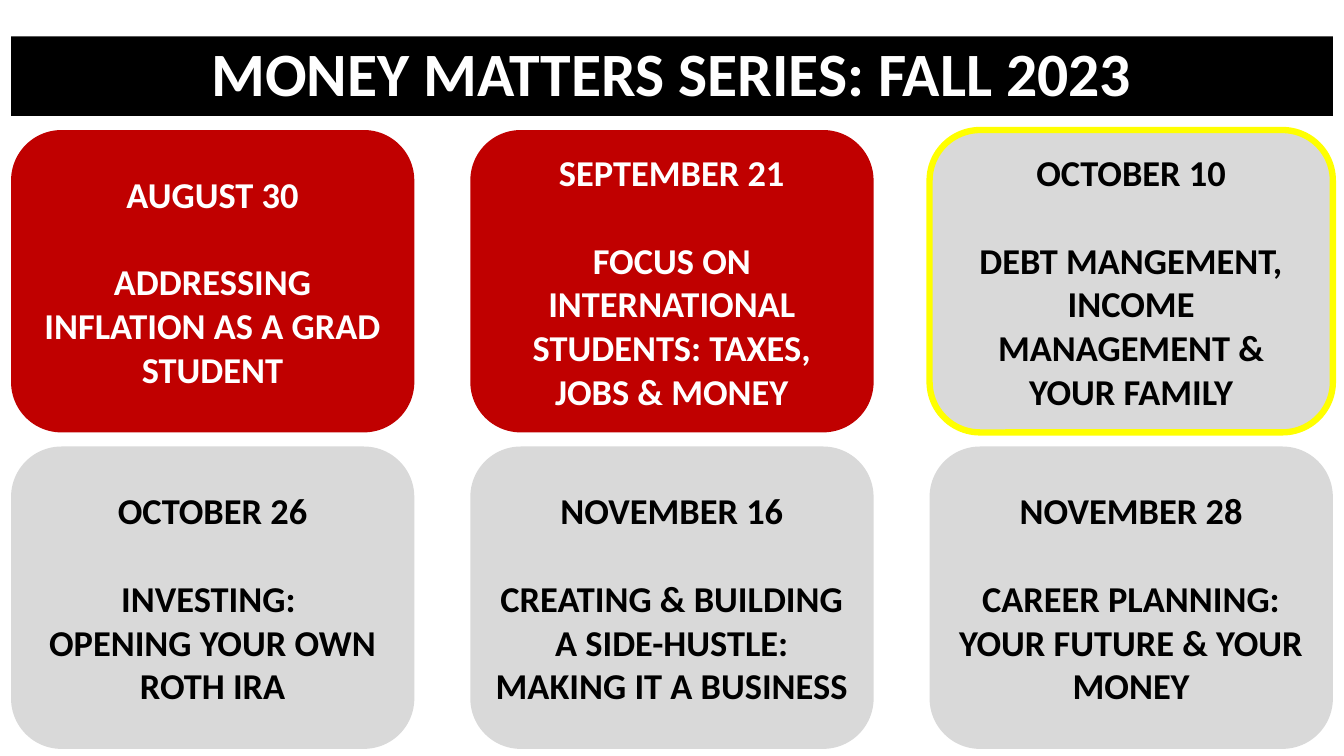
from pptx import Presentation
from pptx.dml.color import RGBColor
from pptx.enum.shapes import MSO_SHAPE
from pptx.enum.text import MSO_ANCHOR, MSO_AUTO_SIZE, PP_ALIGN
from pptx.util import Inches, Pt

ROUNDED = MSO_SHAPE.ROUNDED_RECTANGLE
MIDDLE = MSO_ANCHOR.MIDDLE
NO_AUTOFIT = MSO_AUTO_SIZE.NONE
CENTER = PP_ALIGN.CENTER

BLACK = RGBColor(0x00, 0x00, 0x00)
WHITE = RGBColor(0xFF, 0xFF, 0xFF)
RED = RGBColor(0xC0, 0x00, 0x00)
GRAY = RGBColor(0xD9, 0xD9, 0xD9)
YELLOW = RGBColor(0xFF, 0xFF, 0x00)

LEFT, CONTENT_WIDTH = 0.11, 13.11
CARD_TOP, CARD_WIDTH, CARD_HEIGHT = 1.29, 4, 3
COLUMNS = 3
COLUMN_GAP = (CONTENT_WIDTH - COLUMNS * CARD_WIDTH) / (COLUMNS - 1)
ROW_GAP = 0.14

# Date, topic, fill, text colour, outline
SESSIONS = [
    ("AUGUST 30", "ADDRESSING INFLATION AS A GRAD STUDENT", RED, WHITE, None),
    ("SEPTEMBER 21", "FOCUS ON INTERNATIONAL STUDENTS: TAXES, JOBS & MONEY", RED, WHITE, None),
    ("OCTOBER 10", "DEBT MANGEMENT, INCOME MANAGEMENT & YOUR FAMILY", GRAY, BLACK, YELLOW),
    ("OCTOBER 26", "INVESTING: \vOPENING YOUR OWN ROTH IRA", GRAY, BLACK, None),
    ("NOVEMBER 16", "CREATING & BUILDING A SIDE-HUSTLE: MAKING IT A BUSINESS", GRAY, BLACK, None),
    ("NOVEMBER 28", "CAREER PLANNING: YOUR FUTURE & YOUR MONEY", GRAY, BLACK, None),
]


def write_paragraph(para, text, size, color):
    para.text = text
    para.alignment = CENTER
    for span in para.runs:
        for name, value in {"name": "Calibri", "size": Pt(size), "bold": True}.items():
            setattr(span.font, name, value)
        span.font.color.rgb = color


deck = Presentation()
deck.slide_width, deck.slide_height = Inches(13.33), Inches(7.5)
page = deck.slides.add_slide(deck.slide_layouts[5])

title = page.shapes.title
title.left, title.top = Inches(LEFT), Inches(0.36)
title.width, title.height = Inches(CONTENT_WIDTH), Inches(0.79)
title.fill.solid()
title.fill.fore_color.rgb = BLACK
title.text_frame.auto_size = NO_AUTOFIT
title.text_frame.vertical_anchor = MIDDLE
heading = title.text_frame.paragraphs[0]
write_paragraph(heading, "MONEY MATTERS SERIES: FALL 2023", 44, WHITE)
heading.line_spacing = 0.9

for index, (date, topic, fill, color, outline) in enumerate(SESSIONS):
    row, column = divmod(index, COLUMNS)
    card = page.shapes.add_shape(
        ROUNDED,
        Inches(LEFT + column * (CARD_WIDTH + COLUMN_GAP)),
        Inches(CARD_TOP + row * (CARD_HEIGHT + ROW_GAP)),
        Inches(CARD_WIDTH),
        Inches(CARD_HEIGHT),
    )
    card.shadow.inherit = False
    card.fill.solid()
    card.fill.fore_color.rgb = fill
    if outline:
        card.line.color.rgb = outline
        card.line.width = Pt(4.5)
    else:
        card.line.fill.background()

    frame = card.text_frame
    frame.word_wrap = True
    frame.vertical_anchor = MIDDLE
    write_paragraph(frame.paragraphs[0], date, 26, color)
    topic_para = frame.add_paragraph()
    write_paragraph(topic_para, topic, 26, color)
    topic_para.space_before = Pt(31.5)

deck.save("out.pptx")
